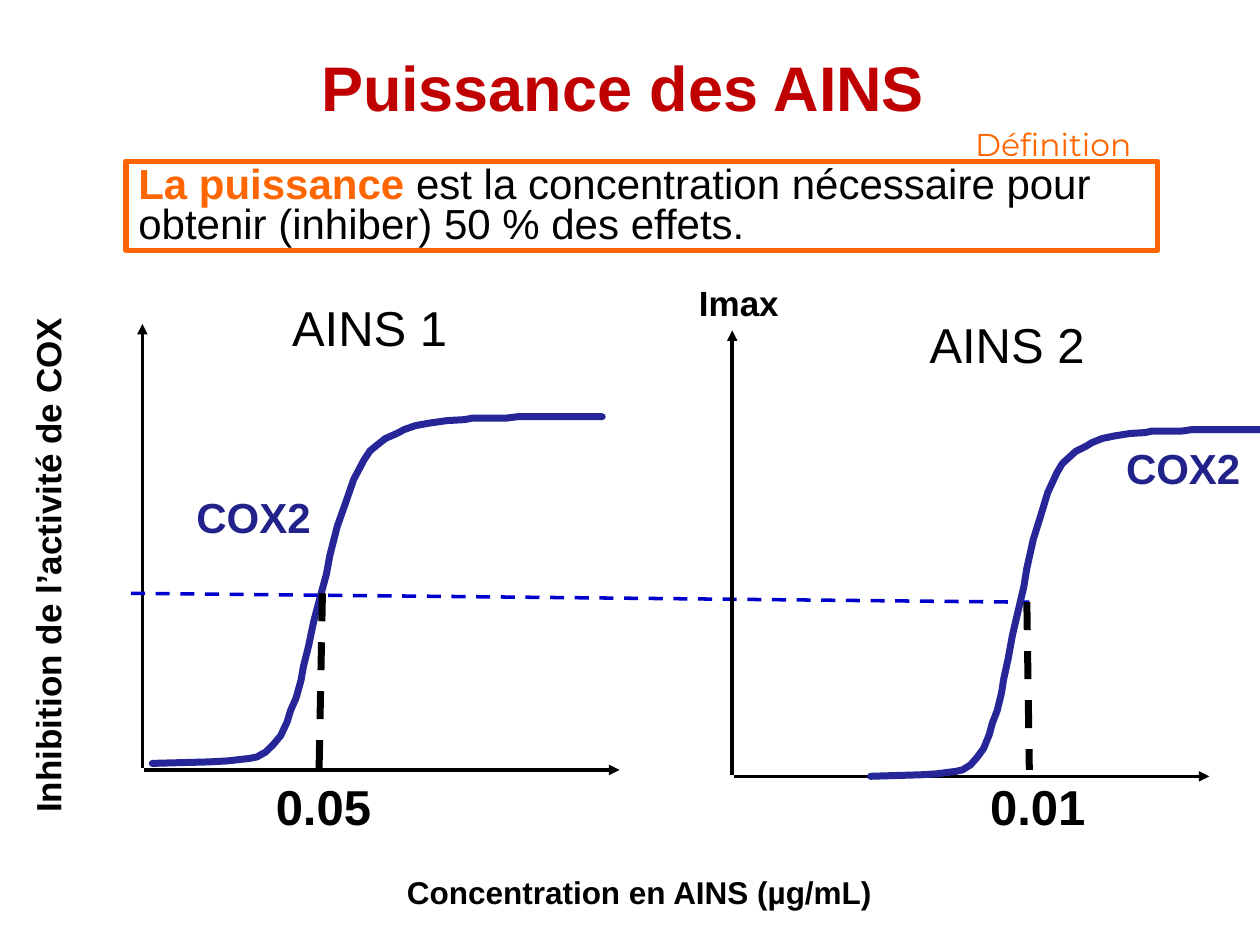
from dataclasses import dataclass

import pptx
import pptx.dml.color
import pptx.enum.dml
import pptx.enum.shapes
import pptx.enum.text
import pptx.oxml.ns
import pptx.oxml.xmlchemy
import pptx.util

Cm = pptx.util.Cm
Pt = pptx.util.Pt
ALIGN = pptx.enum.text.PP_ALIGN
DASH = pptx.enum.dml.MSO_LINE.DASH


@dataclass(frozen=True)
class Theme:
    font: str = "Arial"
    accent: str = "Montserrat"
    black: str = "000000"
    white: str = "FFFFFF"
    red: str = "C00000"
    orange: str = "FF6600"
    curve: str = "262699"
    navy: str = "22228B"
    blue: str = "0000CC"
    title: int = 36
    large: int = 28
    body: int = 24
    label: int = 20
    small: int = 18
    thin: int = 2
    frame: int = 3
    thick: int = 4


T = Theme()

SIGMOID = [
    (0, 0), (1.14, 0.03), (1.52, 0.05), (1.78, 0.08), (1.96, 0.1),
    (2.11, 0.13), (2.29, 0.23), (2.44, 0.38), (2.59, 0.56), (2.72, 0.84),
    (2.79, 1.07), (2.9, 1.32), (3, 1.68), (3.05, 1.96), (3.15, 2.36),
    (3.25, 2.84), (3.38, 3.33), (3.51, 3.81), (3.58, 4.19), (3.73, 4.78),
    (3.89, 5.23), (4.06, 5.72), (4.27, 6.12), (4.39, 6.3), (4.55, 6.43),
    (4.7, 6.55), (4.93, 6.65), (5.08, 6.73), (5.31, 6.81), (5.59, 6.86),
    (5.94, 6.91), (6.3, 6.93), (6.45, 6.96), (7.14, 6.96), (7.37, 6.99),
    (9.07, 6.99),
]


def rgb(code):
    return pptx.dml.color.RGBColor.from_string(code)


def apply(item, form):
    for key, value in form.items():
        setattr(item, key, value)


def add_node(parent, tag, **attrs):
    node = pptx.oxml.xmlchemy.OxmlElement(tag)
    for key, value in attrs.items():
        node.set(key, value)
    parent.append(node)


def stroke(shape, color, width, dash=None):
    shape.line.color.rgb = rgb(color)
    apply(shape.line, {"width": Pt(width), "dash_style": dash})
    return shape._element.spPr.find(pptx.oxml.ns.qn("a:ln"))


def add_run(para, text, size, color=T.black, bold=False, font=T.font):
    run = para.add_run()
    run.text = text
    apply(run.font, {"name": font, "size": Pt(size), "bold": bold})
    run.font.color.rgb = rgb(color)


def add_text(slide, box, text, size, color=T.black, bold=False, font=T.font,
             wrap=True, para=None, frame=None):
    shape = slide.shapes.add_textbox(*map(Cm, box))
    body = shape.text_frame
    body.word_wrap = wrap
    body.auto_size = pptx.enum.text.MSO_AUTO_SIZE.SHAPE_TO_FIT_TEXT
    apply(body, frame or {})
    apply(body.paragraphs[0], para or {})
    add_run(body.paragraphs[0], text, size, color, bold, font)
    return shape


def add_line(slide, start, end, color, width, dash=None, arrow=False):
    kind = pptx.enum.shapes.MSO_CONNECTOR.STRAIGHT
    line = slide.shapes.add_connector(kind, *map(Cm, start + end))
    edge = stroke(line, color, width, dash)
    if arrow:
        add_node(edge, "a:tailEnd", type="triangle")
    add_node(line._element.spPr, "a:effectLst")


def add_axes(slide, left, base):
    add_line(slide, (left, base - 0.03), (left, base - 8.99),
             T.black, T.thin, arrow=True)
    add_line(slide, (left + 0.04, base), (left + 9.62, base),
             T.black, T.thin, arrow=True)


def add_curve(slide, left, base, scale):
    points = [(Cm(left + x * scale), Cm(base - y)) for x, y in SIGMOID]
    pen = slide.shapes.build_freeform(*points[0])
    pen.add_line_segments(points[1:], close=False)
    shape = pen.convert_to_shape()
    shape.shadow.inherit = False
    shape.fill.background()
    edge = stroke(shape, T.curve, T.thick)
    edge.set("cap", "rnd")
    add_node(edge, "a:round")


def add_frame(slide):
    kind = pptx.enum.shapes.MSO_SHAPE.RECTANGLE
    shape = slide.shapes.add_shape(kind, *map(Cm, (2.54, 3.25, 20.8, 1.8)))
    shape.shadow.inherit = False
    shape.fill.solid()
    shape.fill.fore_color.rgb = rgb(T.white)
    stroke(shape, T.orange, T.frame)
    body = shape.text_frame
    apply(body, {"word_wrap": True,
                 "vertical_anchor": pptx.enum.text.MSO_ANCHOR.TOP})
    para = body.paragraphs[0]
    apply(para, {"alignment": ALIGN.LEFT, "line_spacing": 0.8})
    add_run(para, "La puissance ", T.body, T.orange, True)
    add_run(para, "est la concentration nécessaire pour obtenir (inhiber) "
            "50 % des effets.", T.body)


def add_title(slide):
    pad = {"margin_left": Cm(0.56), "margin_right": Cm(0.56),
           "margin_top": Cm(0.33), "margin_bottom": Cm(0.33),
           "auto_size": pptx.enum.text.MSO_AUTO_SIZE.NONE,
           "vertical_anchor": pptx.enum.text.MSO_ANCHOR.MIDDLE}
    add_text(slide, (1.19, 0.13, 22.73, 3.43), "Puissance des AINS",
             T.title, T.red, True, frame=pad,
             para={"alignment": ALIGN.CENTER, "line_spacing": 0.9})


def add_plot(slide, axes, curve, drop, name, spot, tag, dose, value):
    add_axes(slide, *axes)
    add_curve(slide, *curve)
    add_text(slide, tag + (2.95, 1.27), "COX2", T.body, T.navy, True)
    add_text(slide, dose + (3.1, 1.45), value, T.large, bold=True)
    add_line(slide, *drop, T.black, T.thick, DASH)
    add_text(slide, spot + (3.94, 1.45), name, T.large, wrap=False)


def main():
    deck = pptx.Presentation()
    apply(deck, {"slide_width": Cm(25.4), "slide_height": Cm(19.05)})
    slide = deck.slides.add_slide(deck.slide_layouts[6])
    add_title(slide)
    add_plot(slide, (2.87, 15.52), (3.07, 15.39, 1),
             ((6.5, 11.96), (6.43, 15.62)), "AINS 1", (5.64, 5.87),
             (3.71, 9.78), (5.31, 15.52), "0.05")
    add_line(slide, (2.64, 11.96), (20.75, 12.14), T.blue, T.thin, DASH)
    add_plot(slide, (14.76, 15.65), (17.55, 15.65, 0.88),
             ((20.7, 12.14), (20.75, 15.52)), "AINS 2", (18.49, 6.22),
             (22.45, 8.79), (19.71, 15.52), "0.01")
    add_text(slide, (6.96, 17.48, 11.86, 1.02),
             "Concentration en AINS (µg/mL)", T.small, bold=True,
             para={"alignment": ALIGN.CENTER})
    side = add_text(slide, (-4.32, 10.82, 10.54, 1.09),
                    "Inhibition de l’activité de COX", T.label,
                    bold=True, wrap=False)
    side.rotation = 270
    add_text(slide, (13.84, 5.56, 3.33, 1.12), "Imax", T.label, bold=True)
    add_frame(slide)
    add_text(slide, (19.41, 2.39, 3.89, 1.02), "Définition", T.small,
             T.orange, font=T.accent, wrap=False)
    deck.save("out.pptx")


if __name__ == "__main__":
    main()
